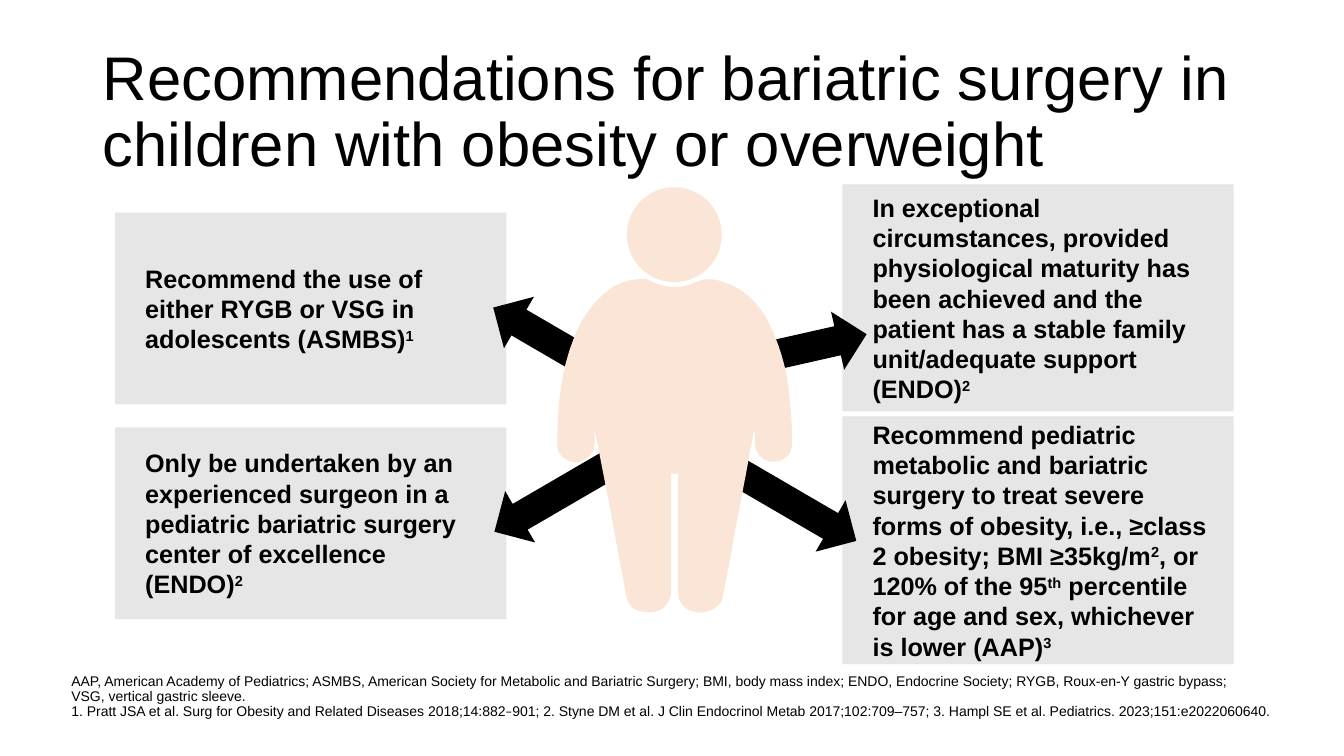
from pptx import Presentation
from pptx.dml.color import RGBColor
from pptx.enum.shapes import MSO_SHAPE
from pptx.enum.text import MSO_ANCHOR, PP_ALIGN
from pptx.util import Cm, Pt

BLACK = RGBColor(0x00, 0x00, 0x00)
GREY = RGBColor(0xE7, 0xE6, 0xE6)
SKIN = RGBColor(0xFB, 0xE5, 0xD6)
RECTANGLE, OVAL, ARROW = MSO_SHAPE.RECTANGLE, MSO_SHAPE.OVAL, MSO_SHAPE.DOWN_ARROW
MIDDLE, BOTTOM, LEFT = MSO_ANCHOR.MIDDLE, MSO_ANCHOR.BOTTOM, PP_ALIGN.LEFT

TITLE = "Recommendations for bariatric surgery in children with obesity or overweight"
FOOTNOTE = (
    "AAP, American Academy of Pediatrics; ASMBS, American Society for Metabolic and "
    "Bariatric Surgery; BMI, body mass index; ENDO, Endocrine Society; RYGB, Roux-en-Y "
    "gastric bypass;\nVSG, vertical gastric sleeve.\n"
    "1. Pratt JSA et al. Surg for Obesity and Related Diseases 2018;14:882^–^901; "
    "2. Styne DM et al. J Clin Endocrinol Metab 2017;102:709–757; "
    "3. Hampl SE et al. Pediatrics. 2023;151:e2022060640."
)
LEFT_COLUMN, RIGHT_COLUMN, COLUMN_WIDTH = 2.9, 21.23, 9.86
RECOMMENDATIONS = [
    (LEFT_COLUMN, 5.36, 4.83,
     "Recommend the use of either RYGB or VSG in adolescents (ASMBS)^1^"),
    (LEFT_COLUMN, 10.77, 4.83,
     "Only be undertaken by an experienced surgeon in a pediatric bariatric surgery "
     "center of excellence (ENDO)^2^"),
    (RIGHT_COLUMN, 4.65, 5.72,
     "In exceptional circumstances, provided physiological maturity has been achieved "
     "and the patient has a stable family unit/adequate support (ENDO)^2^"),
    (RIGHT_COLUMN, 10.49, 6.25,
     "Recommend pediatric metabolic and bariatric surgery to treat severe forms of "
     "obesity, i.e., ≥class 2 obesity; BMI ≥35kg/m^2^, or 120% of the 95^th^ percentile "
     "for age and sex, whichever is lower (AAP)^3^"),
]
ARROWS = [(13.94, 6.45, 120.2), (18.54, 6.38, 257.3),
          (13.97, 9.47, 59.8), (18.57, 9.7, 300.2)]

BODY_UNIT = 0.0254
BODY_START = (673, 470)
BODY_CURVES = [
    (670, 470, 668, 470, 666, 470), (666, 472, 666, 474, 666, 475),
    (666, 512, 666, 549, 666, 585), (666, 601, 654, 610, 639, 607),
    (628, 606, 623, 600, 621, 589), (615, 557, 609, 524, 603, 492),
    (599, 472, 595, 451, 591, 431), (591, 430, 591, 430, 590, 429),
    (590, 433, 590, 437, 590, 440), (590, 448, 585, 454, 578, 457),
    (567, 462, 553, 454, 553, 442), (553, 405, 556, 368, 570, 334),
    (577, 317, 586, 303, 600, 291), (611, 281, 625, 276, 640, 277),
    (642, 277, 644, 278, 646, 279), (660, 286, 675, 287, 690, 280),
    (699, 276, 709, 276, 718, 280), (736, 285, 749, 298, 759, 313),
    (770, 333, 777, 354, 781, 375), (784, 397, 786, 418, 786, 440),
    (786, 449, 779, 457, 770, 458), (761, 459, 752, 454, 750, 445),
    (749, 441, 749, 436, 749, 432), (749, 430, 749, 429, 748, 428),
    (747, 435, 745, 442, 744, 449), (739, 478, 733, 506, 728, 534),
    (725, 553, 721, 573, 717, 592), (717, 595, 715, 599, 712, 601),
    (703, 610, 687, 610, 678, 601), (674, 597, 673, 593, 673, 588),
    (673, 551, 673, 513, 673, 475), (673, 474, 673, 472, 673, 470),
]


def superscript(run):
    run._r.get_or_add_rPr().set("baseline", "30000")


def calibri(run):
    run.font.name = "Calibri"


def write(frame, text, size, bold=False, spacing=1.0, before=0, anchor=MIDDLE,
          margins=(0.25, 0.13, 0.25, 0.13), mark=superscript):
    frame.word_wrap = True
    frame.vertical_anchor = anchor
    frame.margin_left, frame.margin_top, frame.margin_right, frame.margin_bottom = map(Cm, margins)
    paragraph = frame.paragraphs[0]
    paragraph.alignment = LEFT
    paragraph.line_spacing = spacing
    paragraph.space_before = Pt(before)
    for index, piece in enumerate(text.split("^")):
        for row, line in enumerate(piece.split("\n")):
            if row:
                paragraph.add_line_break()
            if line:
                run = paragraph.add_run()
                run.text = line
                run.font.name = "Arial"
                run.font.size = Pt(size)
                run.font.bold = bold
                run.font.color.rgb = BLACK
                if index % 2:
                    mark(run)


def curve_points(start, curves, steps=8):
    x0, y0 = start
    for x1, y1, x2, y2, x3, y3 in curves:
        for step in range(1, steps + 1):
            t = step / steps
            weights = ((1 - t) ** 3, 3 * t * (1 - t) ** 2, 3 * t * t * (1 - t), t ** 3)
            yield (sum(w * x for w, x in zip(weights, (x0, x1, x2, x3))),
                   sum(w * y for w, y in zip(weights, (y0, y1, y2, y3))))
        x0, y0 = x3, y3


class Sheet:
    def __init__(self, slide):
        self.shapes = slide.shapes

    def paint(self, shape, color):
        shape.shadow.inherit = False
        shape.fill.solid()
        shape.fill.fore_color.rgb = color
        shape.line.fill.background()
        return shape

    def preset(self, kind, left, top, width, height, color):
        shape = self.shapes.add_shape(kind, Cm(left), Cm(top), Cm(width), Cm(height))
        return self.paint(shape, color)

    def label(self, left, top, width, height, text, **style):
        holder = self.shapes.add_textbox(Cm(left), Cm(top), Cm(width), Cm(height))
        write(holder.text_frame, text, **style)

    def recommendation(self, left, top, height, text):
        card = self.preset(RECTANGLE, left, top, COLUMN_WIDTH, height, GREY)
        write(card.text_frame, text, size=18, bold=True, margins=(0.76, 0.13, 0.51, 0.13))

    def arrow(self, left, top, angle):
        self.preset(ARROW, left, top, 1.5, 5.23, BLACK).rotation = angle

    def outline(self, start, curves, unit, color):
        points = [(Cm(x * unit), Cm(y * unit)) for x, y in curve_points(start, curves)]
        builder = self.shapes.build_freeform(*points[-1])
        builder.add_line_segments(points[:-1], close=True)
        self.paint(builder.convert_to_shape(), color)


def main():
    deck = Presentation()
    deck.slide_width, deck.slide_height = Cm(33.87), Cm(19.05)
    sheet = Sheet(deck.slides.add_slide(deck.slide_layouts[6]))
    sheet.label(2.34, 1.02, 29.21, 3.68, TITLE, size=44, spacing=0.9)
    sheet.label(1.8, 17.25, 30.38, 0.89, FOOTNOTE, size=10, spacing=0.9, before=10,
                anchor=BOTTOM, margins=(0, 0, 0, 0), mark=calibri)
    for recommendation in RECOMMENDATIONS:
        sheet.recommendation(*recommendation)
    for arrow in ARROWS:
        sheet.arrow(*arrow)
    sheet.outline(BODY_START, BODY_CURVES, BODY_UNIT, SKIN)
    sheet.preset(OVAL, 15.8, 4.72, 2.39, 2.39, SKIN)
    deck.save("out.pptx")


if __name__ == "__main__":
    main()
